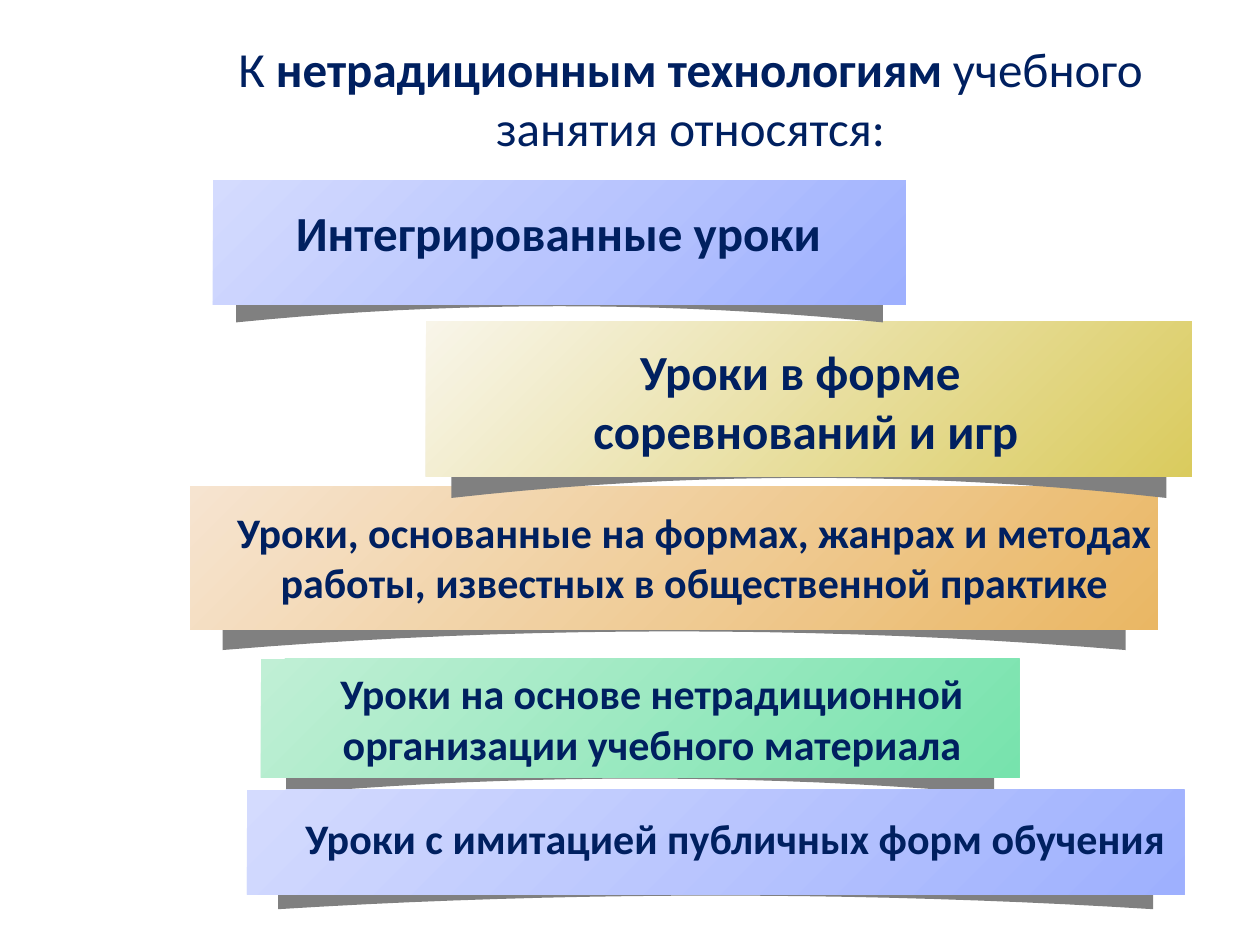
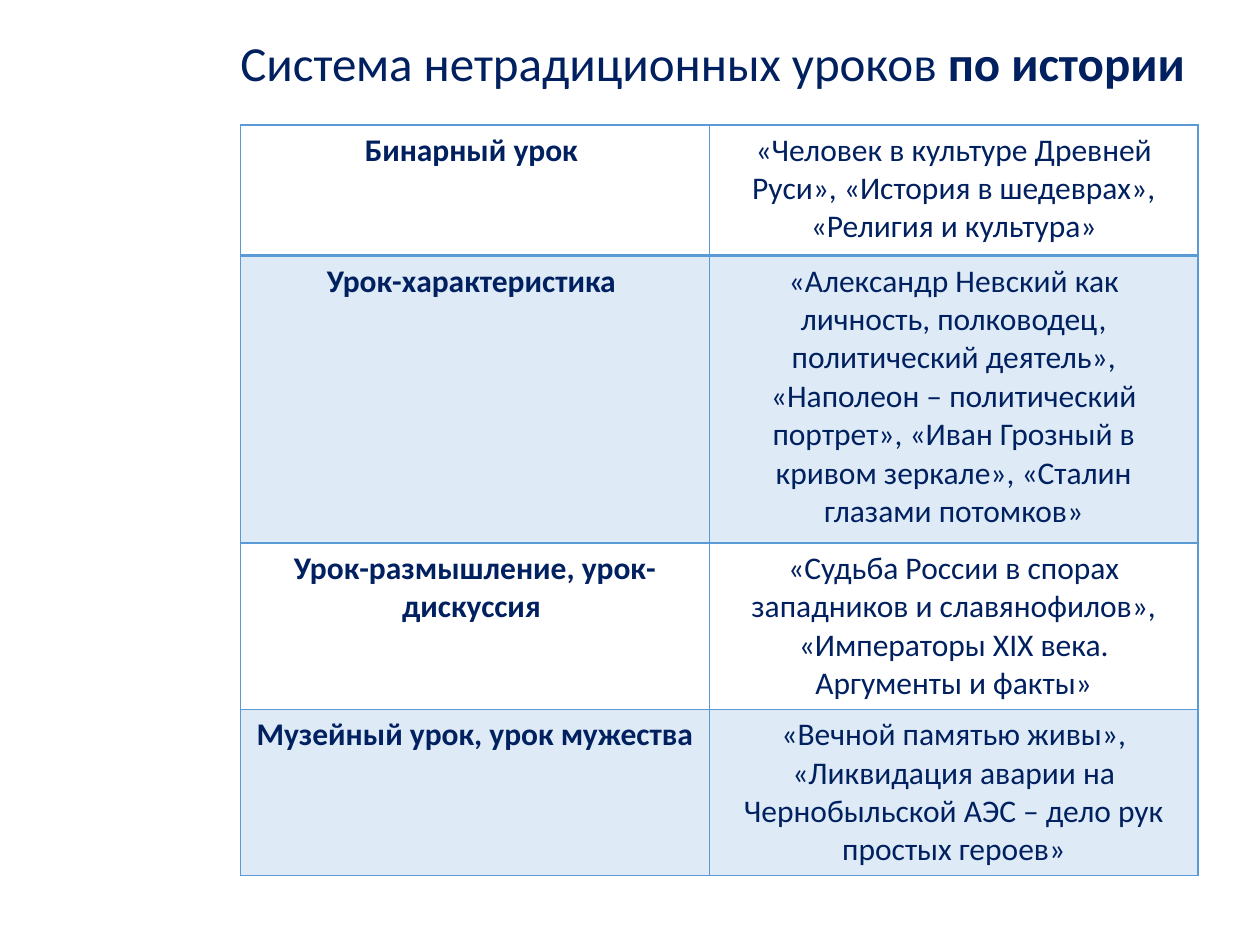
from lxml import etree
from pptx import Presentation
from pptx import util as u
from pptx.dml.color import RGBColor
from pptx.enum import shapes, text
from pptx.oxml.ns import qn

PX = 9144  # EMU in one px, 100 px to the inch
FONT = "Calibri"
NAVY = RGBColor(0x00, 0x20, 0x60)
GREY = RGBColor(0x80, 0x80, 0x80)
BORDER = RGBColor(0x5B, 0x9B, 0xD5)
PALE_BLUE = RGBColor(0xDE, 0xEB, 0xF7)
BLUE = (RGBColor(0xD4, 0xDB, 0xFE), RGBColor(0x9E, 0xB0, 0xFE))
YELLOW = (RGBColor(0xF8, 0xF5, 0xE9), RGBColor(0xDA, 0xCB, 0x5E))
ORANGE = (RGBColor(0xF6, 0xE4, 0xD0), RGBColor(0xEA, 0xB7, 0x64))
GREEN = (RGBColor(0xC0, 0xEF, 0xD5), RGBColor(0x77, 0xE3, 0xAD))

# banner box, gradient, text box, font size, lines; from back to front
BANNERS = [
    ((207, 523, 602, 94), GREEN, (214, 525, 607, 91), 24,
     ["Уроки на основе нетрадиционной организации учебного материала"]),
    ((151, 386, 768, 114), ORANGE, (169, 397, 764, 91), 24,
     ["Уроки, основанные на формах, жанрах и методах работы, "
      "известных в общественной практике"]),
    ((338, 255, 608, 123), YELLOW, (360, 266, 559, 104), 28,
     ["Уроки в форме ", "соревнований и игр"]),
    ((196, 627, 744, 83), BLUE, (223, 640, 721, 50), 24,
     ["Уроки с имитацией публичных форм обучения"]),
    ((169, 143, 550, 99), BLUE, (176, 156, 543, 57), 28,
     ["Интегрированные уроки "]),
]

COLUMN_WIDTHS = [372, 388]
ROW_HEIGHTS = [104, 228, 132, 132]
LESSONS = [
    ("Бинарный урок ",
     "«Человек в культуре Древней Руси», «История в шедеврах», «Религия и культура»"),
    ("Урок-характеристика ",
     "«Александр Невский как личность, полководец, политический деятель», "
     "«Наполеон – политический портрет», «Иван Грозный в кривом зеркале», "
     "«Сталин глазами потомков»"),
    ("Урок-размышление, урок-дискуссия ",
     "«Судьба России в спорах западников и славянофилов», "
     "«Императоры XIX века. Аргументы и факты»"),
    ("Музейный урок, урок мужества ",
     "«Вечной памятью живы», «Ликвидация аварии на Чернобыльской АЭС – "
     "дело рук простых героев»"),
]


def emu(box):
    return [round(v * PX) for v in box]


def write_paragraph(p, runs, size):
    """Fill p with centred (text, bold) runs."""
    p.alignment = text.PP_ALIGN.CENTER
    for words, bold in runs:
        r = p.add_run()
        r.text = words
        r.font.name = FONT
        r.font.size = u.Pt(size)
        r.font.bold = bold
        r.font.color.rgb = NAVY


def add_text(slide, box, paragraphs, size):
    tf = slide.shapes.add_textbox(*emu(box)).text_frame
    tf.word_wrap = True
    for i, runs in enumerate(paragraphs):
        p = tf.add_paragraph() if i else tf.paragraphs[0]
        write_paragraph(p, runs, size)
    return tf


def add_curved_shadow(slide, banner):
    """Grey shape under a banner whose lower edge is a parabolic arch."""
    x, y, w, h = banner
    left, width = x + w / 30, w * 14 / 15
    top, height = y + 0.66 * h, 0.48 * h
    shoulder, arch, steps = 0.25, 0.27, 20
    outline = [(0, shoulder), (0.5, 0), (1, shoulder)]
    for i in range(steps, -1, -1):
        t = i / steps
        outline.append((t, 1 - arch * (1 - (2 * t - 1) ** 2)))
    points = [emu((left + fx * width, top + fy * height)) for fx, fy in outline]
    builder = slide.shapes.build_freeform(*points[0])
    builder.add_line_segments(points[1:])
    sp = builder.convert_to_shape()
    sp.shadow.inherit = False
    sp.fill.solid()
    sp.fill.fore_color.rgb = GREY
    sp.line.fill.background()


def add_banner(slide, box, colours):
    add_curved_shadow(slide, box)
    sp = slide.shapes.add_shape(shapes.MSO_SHAPE.RECTANGLE, *emu(box))
    sp.shadow.inherit = False
    sp.line.fill.background()
    sp.fill.gradient()
    sp.fill.gradient_angle = 315
    for stop, colour in zip(sp.fill.gradient_stops, colours):
        stop.color.rgb = colour


def set_borders(cell, top=1, bottom=1):
    """Draw the four cell borders; widths in points."""
    tc_pr = cell._tc.get_or_add_tcPr()
    for side, width in (("L", 1), ("R", 1), ("T", top), ("B", bottom)):
        ln = etree.SubElement(tc_pr, qn("a:ln" + side), w=str(u.Pt(width)))
        fill = etree.SubElement(ln, qn("a:solidFill"))
        etree.SubElement(fill, qn("a:srgbClr"), val=str(BORDER))


def add_lesson_table(slide, left, top):
    box = (left, top, sum(COLUMN_WIDTHS), sum(ROW_HEIGHTS))
    table = slide.shapes.add_table(
        len(LESSONS), len(COLUMN_WIDTHS), *emu(box)).table
    table.first_row = table.horz_banding = False
    for column, width in zip(table.columns, COLUMN_WIDTHS):
        column.width = width * PX
    for i, lesson in enumerate(LESSONS):
        table.rows[i].height = ROW_HEIGHTS[i] * PX
        for j, words in enumerate(lesson):
            cell = table.cell(i, j)
            set_borders(cell, top=2 if i == 1 else 1, bottom=2 if i == 0 else 1)
            if i % 2:
                cell.fill.solid()
                cell.fill.fore_color.rgb = PALE_BLUE
            else:
                cell.fill.background()
            write_paragraph(cell.text_frame.paragraphs[0], [(words, j == 0)], 18)


def build_technologies(slide):
    for box, colours, _, _, _ in BANNERS:
        add_banner(slide, box, colours)
    add_text(slide, (133, 26, 830, 145),
             [[("К ", False), ("нетрадиционным технологиям ", True),
               ("учебного занятия относятся:", False)]], 28)
    for _, _, text_box, size, lines in BANNERS:
        add_text(slide, text_box, [[(line, True)] for line in lines], size)


def build_history_lessons(slide):
    add_lesson_table(slide, 191, 99)
    title = add_text(slide, (167, 26, 797, 89),
                     [[("Система нетрадиционных уроков ", False),
                       ("по истории", True)]], 28)
    title.paragraphs[0].line_spacing = 0.9


def main():
    prs = Presentation()
    prs.slide_width, prs.slide_height = emu((1000, 750))
    for build in (build_technologies, build_history_lessons):
        build(prs.slides.add_slide(prs.slide_layouts[6]))
    prs.save("out.pptx")


if __name__ == "__main__":
    main()
